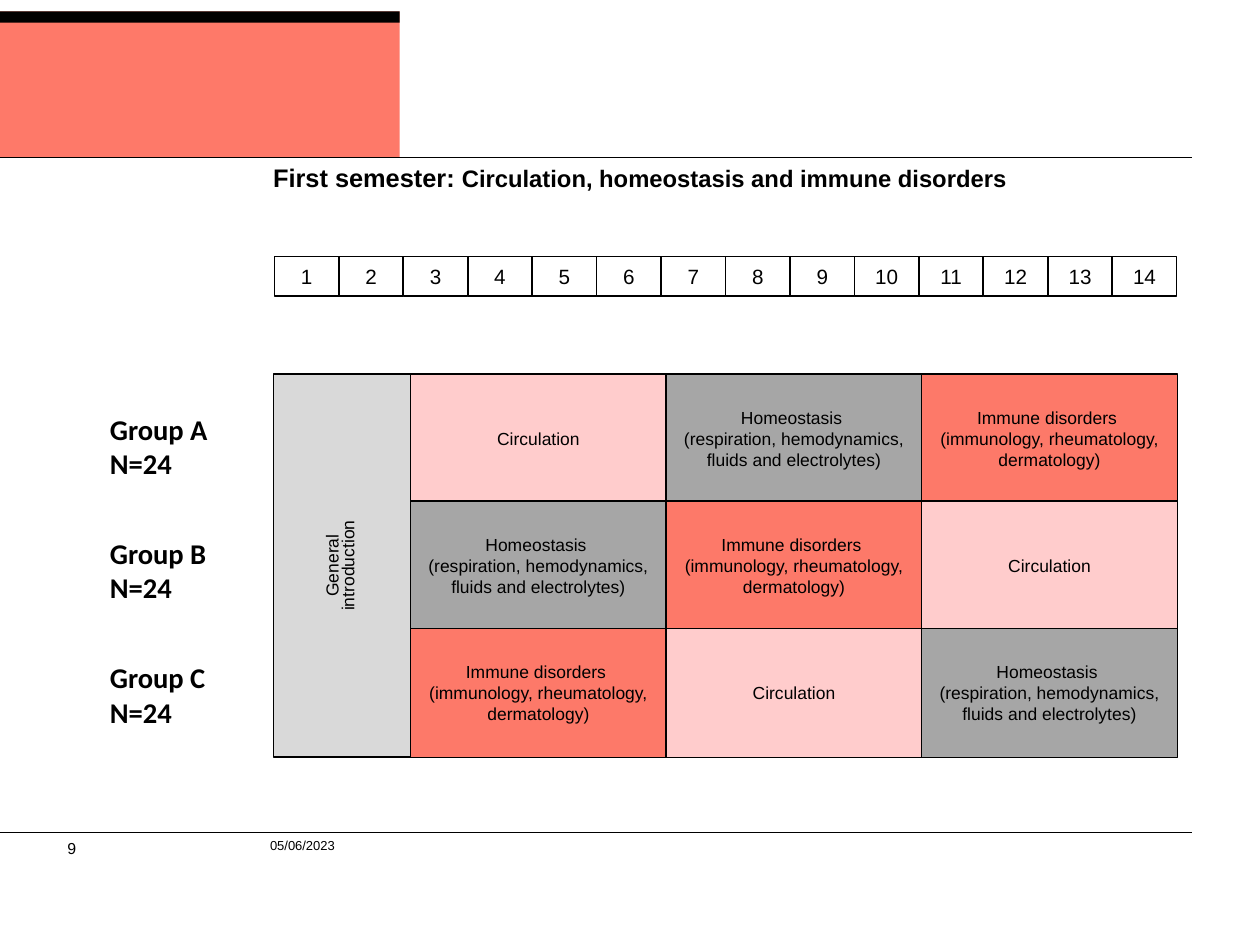
from dataclasses import dataclass
from pptx import Presentation
from pptx.dml.color import RGBColor
from pptx.enum.shapes import MSO_CONNECTOR, MSO_SHAPE
from pptx.enum.text import MSO_ANCHOR, MSO_AUTO_SIZE, PP_ALIGN
from pptx.oxml import parse_xml
from pptx.oxml.ns import nsdecls
from pptx.util import Pt


@dataclass(frozen=True)
class Theme:
    ink: str = "000000"
    white: str = "FFFFFF"
    band: str = "FE7969"
    coral: str = "FD7969"
    pink: str = "FFCCCC"
    grey: str = "A6A6A6"
    pale: str = "D9D9D9"
    face: str = "Arial"
    label: str = "Calibri"
    head: float = 16
    sub: float = 15
    group: float = 18
    week: float = 13
    block: float = 11
    page: float = 10
    date: float = 8.2


theme = Theme()


def write(shape, text, size, face=theme.face, bold=False, inset=0, wrap=True,
          align=PP_ALIGN.LEFT, anchor=MSO_ANCHOR.TOP, space=1.0):
    frame = shape.text_frame
    frame.text = text
    edges = {"margin_" + side: Pt(inset) for side in ("left", "top", "right", "bottom")}
    form = {"word_wrap": wrap, "auto_size": MSO_AUTO_SIZE.NONE, "vertical_anchor": anchor}
    for key, value in {**edges, **form}.items():
        setattr(frame, key, value)
    for para in frame.paragraphs:
        for key, value in {"alignment": align, "line_spacing": space}.items():
            setattr(para, key, value)
        for run in para.runs:
            for key, value in {"name": face, "size": Pt(size), "bold": bold}.items():
                setattr(run.font, key, value)
            run.font.color.rgb = RGBColor.from_string(theme.ink)


def box(shapes, place, fill, edge=True):
    shape = shapes.add_shape(MSO_SHAPE.RECTANGLE, *map(Pt, place))
    shape.shadow.inherit = False
    shape.fill.solid()
    shape.fill.fore_color.rgb = RGBColor.from_string(fill)
    if edge:
        shape.line.color.rgb = RGBColor.from_string(theme.ink)
        shape.line.width = Pt(1)
    else:
        shape.line.fill.background()
    return shape


deck = Presentation()
deck.slide_width, deck.slide_height = Pt(793.75), Pt(595.25)
slide = deck.slides.add_slide(deck.slide_layouts[5])
shapes = slide.shapes

box(shapes, (0, 7.2, 251.8, 92), theme.band, edge=False)
box(shapes, (0, 7.2, 251.8, 7), theme.ink, edge=False)
for y in (99.1, 524):
    rule = shapes.add_connector(MSO_CONNECTOR.STRAIGHT, Pt(0), Pt(y), Pt(751), Pt(y))
    rule.line.color.rgb = RGBColor.from_string(theme.ink)
    rule.line.width = Pt(0.3)
    rule._element.spPr.append(parse_xml("<a:effectLst %s/>" % nsdecls("a")))

title = shapes.title
place = {"left": 172.1, "top": 102.2, "width": 569.5, "height": 23.8}
for key, value in place.items():
    setattr(title, key, Pt(value))
write(title, "First semester: ", theme.head, bold=True)
topic = title.text_frame.paragraphs[0].add_run()
topic.text = "Circulation, homeostasis and immune disorders"
for key, value in {"name": theme.face, "size": Pt(theme.sub), "bold": True}.items():
    setattr(topic.font, key, value)
topic.font.color.rgb = RGBColor.from_string(theme.ink)

middle = {"align": PP_ALIGN.CENTER, "anchor": MSO_ANCHOR.MIDDLE}
weeks = shapes.add_group_shape().shapes
for i in range(14):
    cell = box(weeks, (172.9 + 40.6 * i, 161.5, 40.6, 25), theme.white)
    write(cell, str(i + 1), theme.week, **middle)

themes = [
    ("Circulation", theme.pink),
    ("Homeostasis \n(respiration, hemodynamics, fluids and electrolytes)", theme.grey),
    ("Immune disorders \n(immunology, rheumatology,\ndermatology)", theme.coral),
]
plan = shapes.add_group_shape().shapes
for row, name in enumerate("ABC"):
    for col in range(3):
        text, fill = themes[(row + col) % 3]
        cell = box(plan, (258.6 + 161 * col, 235.5 + 80.2 * row, 161.2, 81.2), fill)
        write(cell, text, theme.block, inset=7.2, **middle)
    label = shapes.add_textbox(Pt(69.2), Pt(259.2 + 78.4 * row), Pt(102.2), Pt(38.9))
    write(label, f"Group {name}\nN=24", theme.group, theme.label, bold=True, wrap=False)

intro = box(plan, (94.9, 313, 241, 86.4), theme.pale)
intro.rotation = 270
write(intro, "General\nintroduction", theme.block, inset=7.2, space=0.75, **middle)

page = shapes.add_textbox(Pt(42.5), Pt(528.5), Pt(12.2), Pt(12.2))
write(page, "9", theme.page, wrap=False)
date = shapes.add_textbox(Pt(170.1), Pt(527.8), Pt(517), Pt(18.7))
write(date, "05/06/2023", theme.date)

deck.save("out.pptx")
